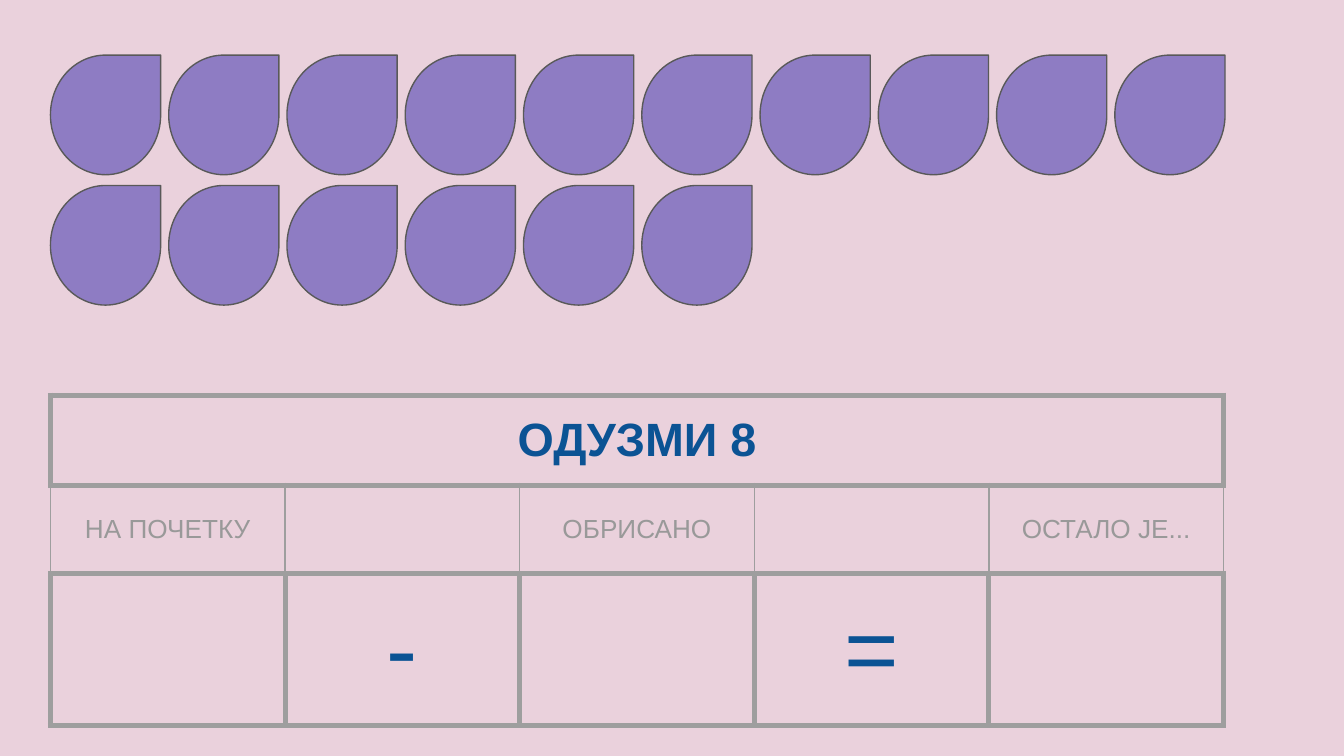
from dataclasses import dataclass

from lxml import etree
from pptx import Presentation
from pptx.dml.color import RGBColor
from pptx.enum import shapes, text
from pptx.oxml import ns
from pptx.util import Inches, Pt

PINK, PURPLE, OUTLINE = "EAD1DC", "8E7CC3", "595959"
BLUE, GREY, BORDER = "0B5394", "999999", "9E9E9E"
SLIDE_WIDTH = 10
SLIDE_HEIGHT = SLIDE_WIDTH * 9 / 16
LEFT = 0.375
THICK, THIN = 3, 0.75


@dataclass
class DropRow:
    top: float
    count: int


@dataclass
class TableRow:
    height: float
    labels: tuple[str, ...]
    size: int
    color: str
    bold: bool = False
    side_border: float = THICK


DROP_ROWS = [DropRow(0.41, 10), DropRow(1.38, 6)]
TABLE_ROWS = [
    TableRow(0.67, ("ОДУЗМИ 8", "", "", "", ""), 25, BLUE, bold=True),
    TableRow(0.66, ("НА ПОЧЕТКУ", "", "ОБРИСАНО", "", "ОСТАЛО ЈЕ..."), 14, GREY,
             side_border=THIN),
    TableRow(1.13, ("", "-", "", "=", ""), 50, BLUE),
]


def rgb(value: str) -> RGBColor:
    return RGBColor.from_string(value)


def draw_drop(slide, left: float, top: float) -> None:
    drop = slide.shapes.add_shape(shapes.MSO_SHAPE.TEAR, Inches(left), Inches(top),
                                  Inches(0.82), Inches(0.89))
    drop.shadow.inherit = False
    drop.fill.solid()
    drop.fill.fore_color.rgb = rgb(PURPLE)
    drop.line.color.rgb = rgb(OUTLINE)
    drop.line.width = Pt(0.75)


def set_borders(cell, side_width: float) -> None:
    properties = cell._tc.get_or_add_tcPr()
    widths = {"a:lnL": side_width, "a:lnR": side_width, "a:lnT": THICK, "a:lnB": THICK}
    for tag, width in widths.items():
        line = etree.SubElement(properties, ns.qn(tag), w=str(Pt(width)))
        fill = etree.SubElement(line, ns.qn("a:solidFill"))
        etree.SubElement(fill, ns.qn("a:srgbClr"), val=BORDER)


def fill_cell(cell, label: str, row: TableRow) -> None:
    set_borders(cell, row.side_border)
    cell.fill.background()
    cell_format = {"vertical_anchor": text.MSO_ANCHOR.MIDDLE}
    for side in ("left", "right", "top", "bottom"):
        cell_format[f"margin_{side}"] = Inches(0.1)
    for name, value in cell_format.items():
        setattr(cell, name, value)
    if not label:
        return
    paragraph = cell.text_frame.paragraphs[0]
    paragraph.alignment = text.PP_ALIGN.CENTER
    run = paragraph.add_run()
    run.text = label
    font_format = {"name": "Arial", "size": Pt(row.size), "bold": row.bold}
    for name, value in font_format.items():
        setattr(run.font, name, value)
    run.font.color.rgb = rgb(row.color)


def draw_table(slide, rows: list[TableRow], top: float, width: float) -> None:
    columns = len(rows[0].labels)
    height = sum(row.height for row in rows)
    table = slide.shapes.add_table(len(rows), columns, Inches(LEFT), Inches(top),
                                   Inches(width), Inches(height)).table
    table.first_row = table.horz_banding = False
    for index, row in enumerate(rows):
        table.rows[index].height = Inches(row.height)
        for column, label in enumerate(row.labels):
            fill_cell(table.cell(index, column), label, row)
    # The title spans the whole first row
    table.cell(0, 0).merge(table.cell(0, columns - 1))


def main() -> None:
    presentation = Presentation()
    presentation.slide_width = Inches(SLIDE_WIDTH)
    presentation.slide_height = Inches(SLIDE_HEIGHT)
    slide = presentation.slides.add_slide(presentation.slide_layouts[6])
    slide.background.fill.solid()
    slide.background.fill.fore_color.rgb = rgb(PINK)

    # Subtraction table
    draw_table(slide, TABLE_ROWS, top=2.94, width=8.73)

    # Sixteen drops to count
    for row in DROP_ROWS:
        for index in range(row.count):
            draw_drop(slide, LEFT + 0.88 * index, row.top)

    presentation.save("out.pptx")


if __name__ == "__main__":
    main()
